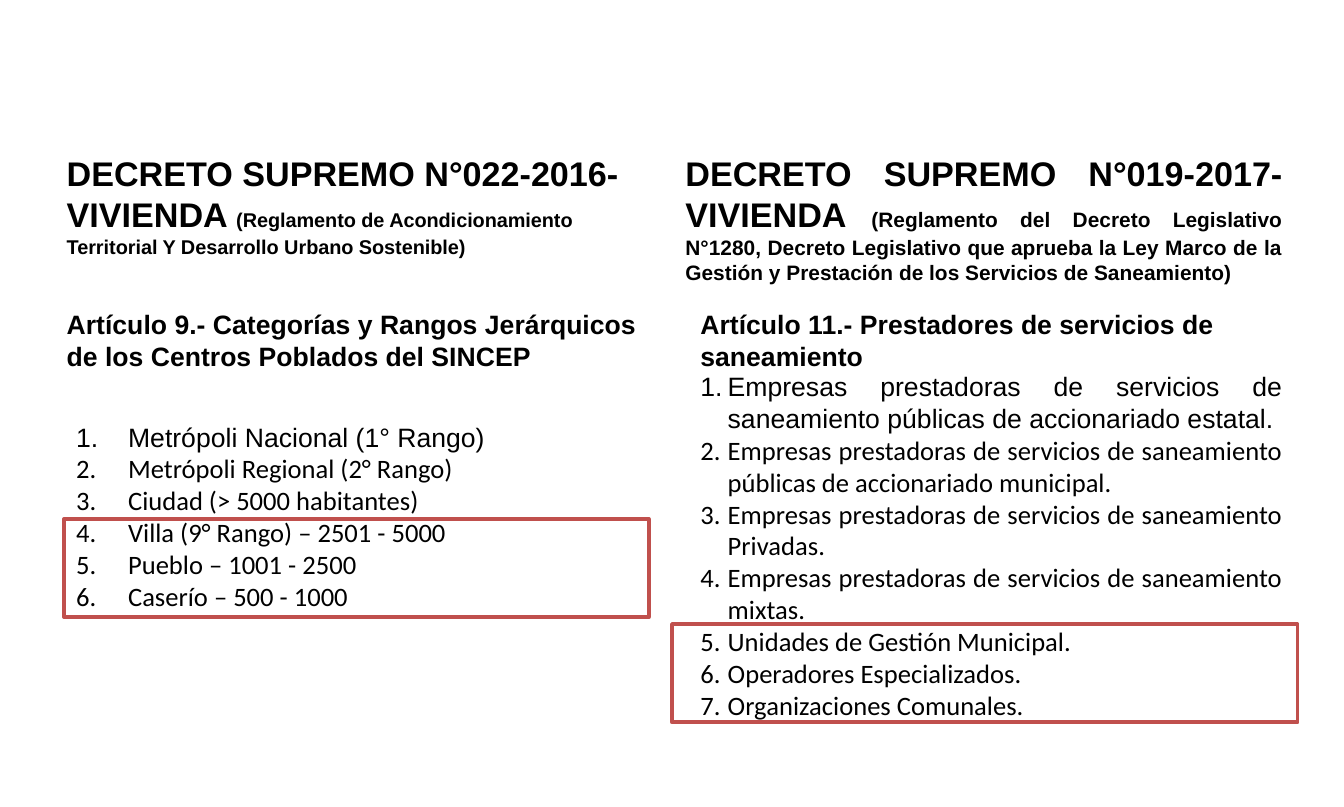
import pptx
import pptx.dml.color
import pptx.enum.shapes
import pptx.enum.text
import pptx.oxml.ns
import pptx.util
from lxml import etree

Inches = pptx.util.Inches
Pt = pptx.util.Pt
LEFT = pptx.enum.text.PP_ALIGN.LEFT
JUSTIFY = pptx.enum.text.PP_ALIGN.JUSTIFY

CATEGORIES = [
    "Metrópoli Nacional (1° Rango)",
    "Metrópoli Regional (2° Rango)",
    "Ciudad (> 5000 habitantes)",
    "Villa (9° Rango) – 2501 - 5000",
    "Pueblo – 1001 - 2500",
    "Caserío – 500 - 1000",
]
PROVIDERS = [
    "Empresas prestadoras de servicios de saneamiento públicas de accionariado estatal.",
    "Empresas prestadoras de servicios de saneamiento públicas de accionariado municipal.",
    "Empresas prestadoras de servicios de saneamiento Privadas.",
    "Empresas prestadoras de servicios de saneamiento mixtas.",
    "Unidades de Gestión Municipal.",
    "Operadores Especializados.",
    "Organizaciones Comunales.",
]


def color(value):
    return pptx.dml.color.RGBColor.from_string(value)


def add_run(paragraph, text, size=14, font="Arial", bold=False):
    run = paragraph.add_run()
    run.text = text
    run.font.size = Pt(size)
    run.font.name = font
    run.font.bold = bold
    run.font.color.rgb = color("000000")


def add_box(slide, left, top, width, height):
    box = slide.shapes.add_textbox(Inches(left), Inches(top), Inches(width), Inches(height))
    box.text_frame.word_wrap = True
    box.text_frame.auto_size = pptx.enum.text.MSO_AUTO_SIZE.SHAPE_TO_FIT_TEXT
    return box.text_frame


def next_paragraph(frame, index, align):
    paragraph = frame.add_paragraph() if index else frame.paragraphs[0]
    paragraph.alignment = align
    return paragraph


def add_decree(slide, position, name, subject, subject_size, align):
    paragraph = next_paragraph(add_box(slide, *position), 0, align)
    add_run(paragraph, name, size=18, bold=True)
    add_run(paragraph, subject, size=subject_size, bold=True)


def add_article(slide, position, lines):
    frame = add_box(slide, *position)
    for index, line in enumerate(lines):
        add_run(next_paragraph(frame, index, JUSTIFY), line, bold=True)


def add_numbered_list(slide, position, items, indent, align):
    frame = add_box(slide, *position)
    for index, item in enumerate(items):
        paragraph = next_paragraph(frame, index, align)
        properties = paragraph._p.get_or_add_pPr()
        properties.set("marL", str(Inches(indent)))
        properties.set("indent", str(-Inches(indent)))
        number = etree.SubElement(properties, pptx.oxml.ns.qn("a:buAutoNum"))
        number.set("type", "arabicPeriod")
        add_run(paragraph, item, font="Calibri" if index else "Arial")


def add_highlight(slide, left, top, width, height):
    shape = slide.shapes.add_shape(
        pptx.enum.shapes.MSO_SHAPE.RECTANGLE,
        Inches(left), Inches(top), Inches(width), Inches(height))
    shape.shadow.inherit = False
    shape.fill.background()
    shape.line.color.rgb = color("C0504D")
    shape.line.width = Pt(2)


def main():
    presentation = pptx.Presentation()
    presentation.slide_width = Inches(9.84)
    presentation.slide_height = Inches(5.91)
    slide = presentation.slides.add_slide(presentation.slide_layouts[6])

    # Left column: settlement categories
    add_decree(slide, (0.39, 1.07, 4.41, 0.88), "DECRETO SUPREMO N°022-2016-VIVIENDA ",
               "(Reglamento de Acondicionamiento Territorial Y Desarrollo Urbano Sostenible)",
               10.5, LEFT)
    add_article(slide, (0.39, 2.21, 4.37, 0.57), [
        "Artículo 9.- Categorías y Rangos Jerárquicos de los Centros Poblados del SINCEP"])
    add_numbered_list(slide, (0.46, 3.03, 4.33, 1.51), CATEGORIES, 0.38, LEFT)

    # Right column: sanitation service providers
    add_article(slide, (5.03, 2.21, 4.46, 0.57), [
        "Artículo 11.- Prestadores de servicios de", "saneamiento"])
    add_numbered_list(slide, (5.03, 2.66, 4.46, 2.69), PROVIDERS, 0.2, JUSTIFY)
    add_decree(slide, (4.92, 1.07, 4.57, 1.08), "DECRETO SUPREMO N°019-2017-VIVIENDA ",
               "(Reglamento del Decreto Legislativo N°1280, Decreto Legislativo que aprueba "
               "la Ley Marco de la Gestión y Prestación de los Servicios de Saneamiento)",
               11, JUSTIFY)

    # Frames around the rural entries
    add_highlight(slide, 0.47, 3.8, 4.28, 0.72)
    add_highlight(slide, 4.92, 4.57, 4.58, 0.72)

    presentation.save("out.pptx")


if __name__ == "__main__":
    main()
